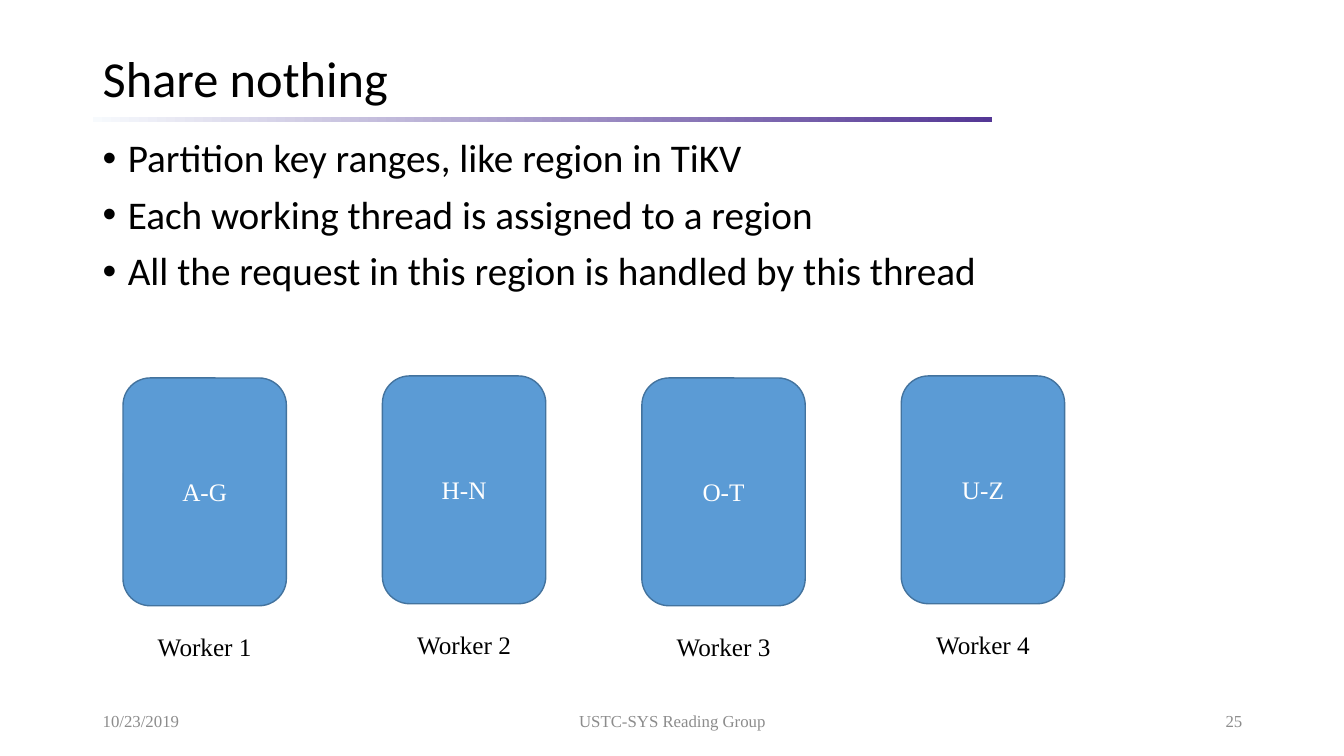
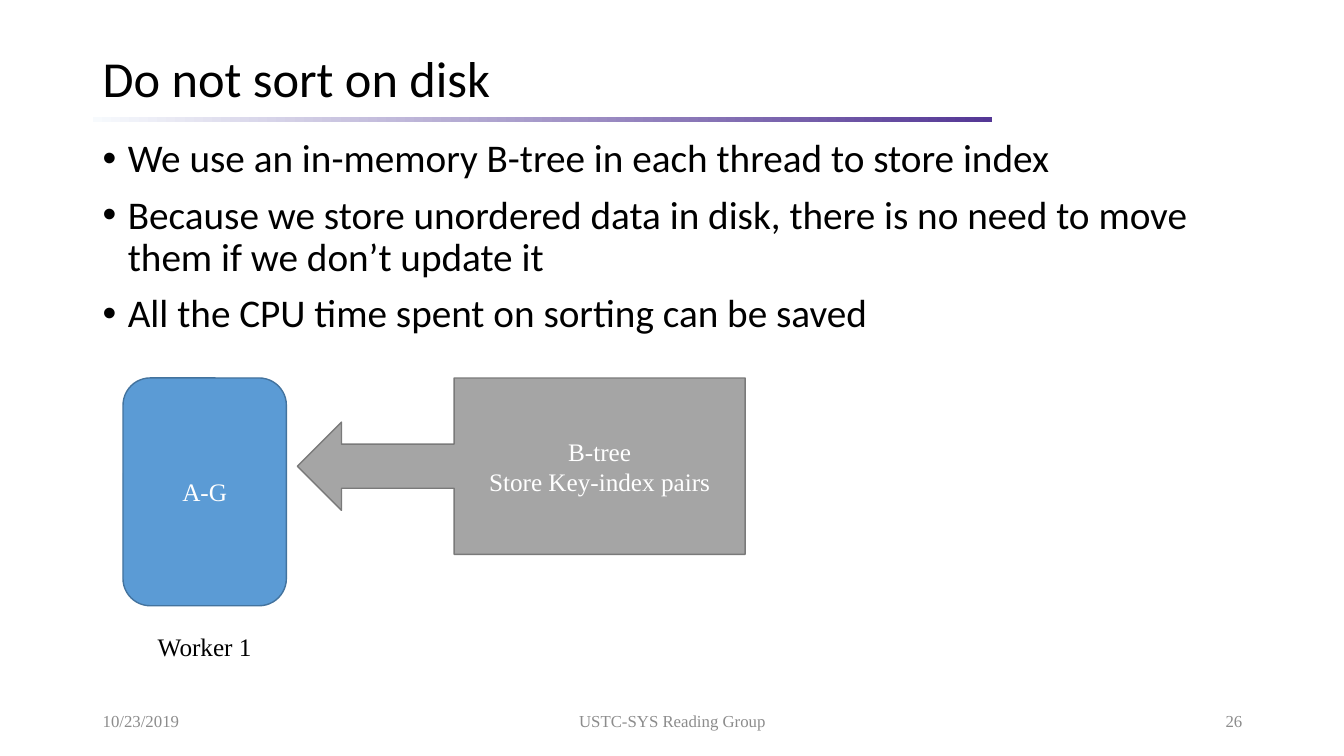
from dataclasses import dataclass

from lxml.etree import SubElement
from pptx import Presentation
from pptx.dml.color import RGBColor
from pptx.enum.shapes import MSO_SHAPE as Kind
from pptx.enum.text import MSO_ANCHOR as Anchor, PP_ALIGN as Align
from pptx.oxml.ns import qn
from pptx.shapes.autoshape import Shape
from pptx.slide import Slide
from pptx.util import Inches, Pt


@dataclass(frozen=True)
class Theme:
    sans: str = "Calibri"
    serif: str = "Times New Roman"
    black: str = "000000"
    white: str = "FFFFFF"
    muted: str = "8C8C8C"
    blue: str = "5B9BD5"
    navy: str = "43739E"
    gray: str = "A5A5A5"
    slate: str = "7A7A7A"
    pale: str = "F7FAFD"
    violet: str = "543795"
    title: int = 36
    body: int = 28
    label: int = 18
    foot: int = 12


@dataclass(frozen=True)
class Box:
    left: float
    top: float
    width: float
    height: float

    def emu(self) -> tuple[Inches, ...]:
        sides = (self.left, self.top, self.width, self.height)
        return tuple(Inches(side) for side in sides)


@dataclass(frozen=True)
class Style:
    font: str
    size: int
    color: str
    align: Align = Align.LEFT
    anchor: Anchor = Anchor.MIDDLE
    line: float = 1.0
    gap: int = 0
    bullet: bool = False


@dataclass(frozen=True)
class Page:
    number: int
    title: str
    points: tuple[str, ...]
    ranges: tuple[str, ...]


THEME = Theme()
TITLE = Style(THEME.sans, THEME.title, THEME.black, line=0.9)
BODY = Style(THEME.sans, THEME.body, THEME.black, anchor=Anchor.TOP,
             line=0.9, gap=10, bullet=True)
LABEL = Style(THEME.serif, THEME.label, THEME.black, Align.CENTER)
INNER = Style(THEME.serif, THEME.label, THEME.white, Align.CENTER)

EDGE, SPAN = 0.92, 11.5
FOOT_TOP, FOOT_TALL = 6.95, 0.4
START, PITCH = 1.22, 2.573
TOP, SHIFT = 3.75, 0.02

PAGES = (
    Page(25, "Share nothing",
         ("Partition key ranges, like region in TiKV",
          "Each working thread is assigned to a region",
          "All the request in this region is handled by this thread"),
         ("A-G", "H-N", "O-T", "U-Z")),
    Page(26, "Do not sort on disk",
         ("We use an in-memory B-tree in each thread to store index",
          "Because we store unordered data in disk, there is no need to move "
          "them if we don’t update it",
          "All the CPU time spent on sorting can be saved"),
         ("A-G",)),
)


def rgb(color: str) -> RGBColor:
    return RGBColor.from_string(color)


def write(shape: Shape, text: str, style: Style) -> None:
    """Fill a shape with text, one paragraph per line."""
    frame = shape.text_frame
    frame.text = text
    frame.word_wrap = True
    frame.vertical_anchor = style.anchor
    for index, para in enumerate(frame.paragraphs):
        para.alignment = style.align
        para.line_spacing = style.line
        if index and style.gap:
            para.space_before = Pt(style.gap)
        if style.bullet:
            props = para._p.get_or_add_pPr()
            props.set("marL", str(Inches(0.25)))
            props.set("indent", str(Inches(-0.25)))
            SubElement(props, qn("a:buFont"), typeface="Arial")
            SubElement(props, qn("a:buChar"), char="•")
        for run in para.runs:
            run.font.name = style.font
            run.font.size = Pt(style.size)
            run.font.color.rgb = rgb(style.color)


def add_text(slide: Slide, box: Box, text: str, style: Style) -> None:
    write(slide.shapes.add_textbox(*box.emu()), text, style)


def add_block(slide: Slide, kind: Kind, box: Box, text: str,
              fill: str, line: str) -> None:
    """Draw a filled, outlined shape with centred white text."""
    shape = slide.shapes.add_shape(kind, *box.emu())
    shape.shadow.inherit = False
    shape.fill.solid()
    shape.fill.fore_color.rgb = rgb(fill)
    shape.line.color.rgb = rgb(line)
    shape.line.width = Pt(1)
    write(shape, text, INNER)


def add_rule(slide: Slide) -> None:
    """Draw the fading line below the title."""
    rule = slide.shapes.add_shape(
        Kind.RECTANGLE, *Box(EDGE, 1.16, 8.92, 0.05).emu())
    rule.shadow.inherit = False
    rule.line.fill.background()
    rule.fill.gradient()
    rule.fill.gradient_angle = 0
    for stop, color in zip(rule.fill.gradient_stops,
                           (THEME.pale, THEME.violet)):
        stop.color.rgb = rgb(color)


def add_foot(slide: Slide, number: int) -> None:
    parts = (
        (EDGE, 3, "10/23/2019", Align.LEFT),
        (4.42, 4.5, "USTC-SYS Reading Group", Align.CENTER),
        (9.42, 3, str(number), Align.RIGHT),
    )
    for left, width, text, align in parts:
        style = Style(THEME.serif, THEME.foot, THEME.muted, align)
        add_text(slide, Box(left, FOOT_TOP, width, FOOT_TALL), text, style)


def add_worker(slide: Slide, index: int, keys: str) -> None:
    left = START + index * PITCH
    top = TOP - SHIFT * (index % 2)
    add_block(slide, Kind.ROUNDED_RECTANGLE, Box(left, top, 1.62, 2.26),
              keys, THEME.blue, THEME.navy)
    add_text(slide, Box(left, top + 2.46, 1.62, 0.4),
             f"Worker {index + 1}", LABEL)


def add_page(deck: Presentation, page: Page) -> Slide:
    slide = deck.slides.add_slide(deck.slide_layouts[6])
    add_rule(slide)
    add_text(slide, Box(EDGE, 0.43, SPAN, 0.75), page.title, TITLE)
    add_text(slide, Box(EDGE, 1.33, SPAN, 5.43), "\n".join(page.points), BODY)
    add_foot(slide, page.number)
    for index, keys in enumerate(page.ranges):
        add_worker(slide, index, keys)
    return slide


def main() -> None:
    deck = Presentation()
    deck.slide_width, deck.slide_height = Inches(13.33), Inches(7.5)
    _, sort = [add_page(deck, page) for page in PAGES]
    add_block(sort, Kind.LEFT_ARROW_CALLOUT, Box(2.95, TOP, 4.44, 1.75),
              "B-tree\nStore Key-index pairs", THEME.gray, THEME.slate)
    deck.save("out.pptx")


if __name__ == "__main__":
    main()
